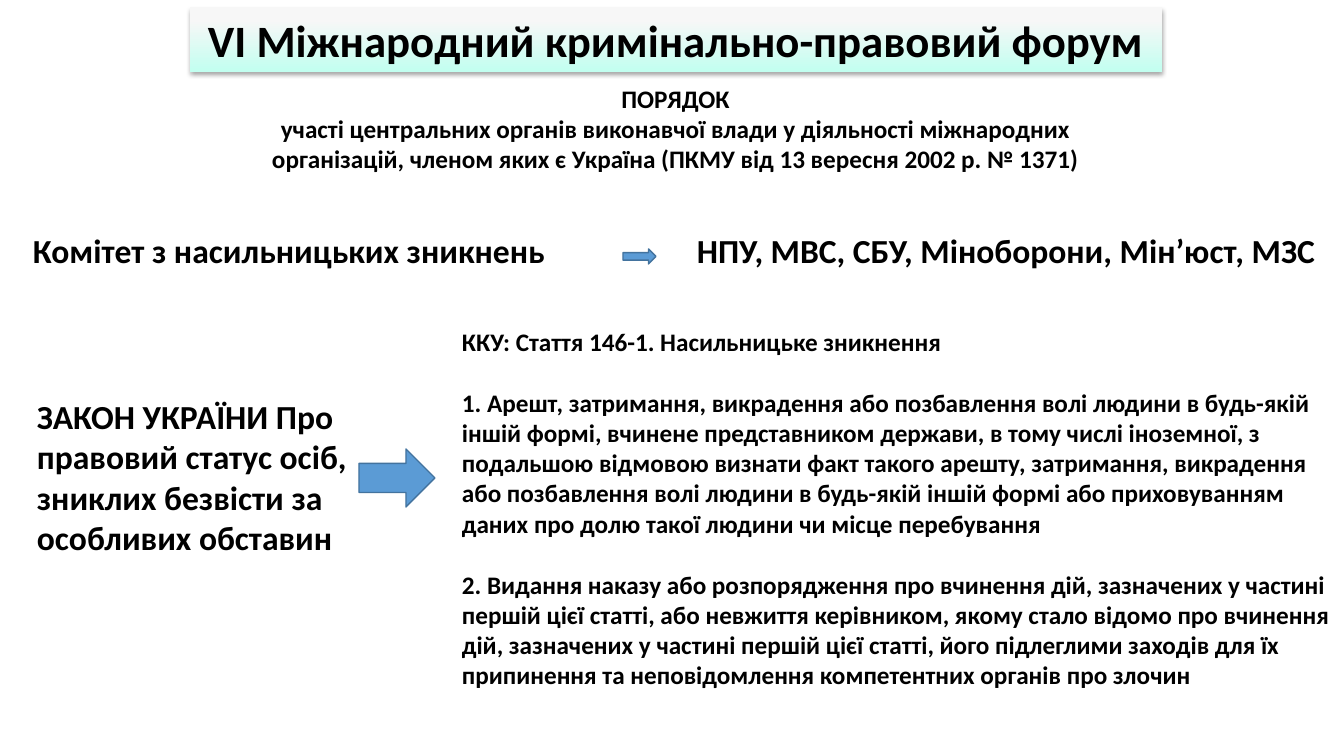
from lxml import etree
from pptx import Presentation
from pptx import util as u
from pptx.dml.color import RGBColor
from pptx.enum import shapes, text
from pptx.oxml import ns

EMU_PER_PX = 914400 / 100.8
COLORS = {
    "text": "000000",
    "title_bottom": "C2FFF0",
    "title_top": "F7F7F7",
    "arrow": "5B9BD5",
    "arrow_line": "43739E",
    "shadow": "000000",
}
FONT = "Calibri"
LEFT, CENTER = text.PP_ALIGN.LEFT, text.PP_ALIGN.CENTER

TITLE = ("VІ Міжнародний кримінально-правовий форум", (190, 7, 972, 65))

# paragraphs, box in px, size in pt, alignment, gap between paragraphs in pt
TEXTS = [
    (["ПОРЯДОК",
      "участі центральних органів виконавчої влади у діяльності міжнародних "
      "організацій, членом яких є Україна (ПКМУ від 13 вересня 2002 р. № 1371)"],
     (237, 78, 877, 102), 18, CENTER, 0),
    (["Комітет з насильницьких зникнень"], (23, 225, 590, 50), 24, LEFT, 0),
    (["НПУ, МВС, СБУ, Міноборони, Мін’юст, МЗС"], (687, 225, 650, 50), 24, LEFT, 0),
    (["ЗАКОН УКРАЇНИ Про правовий статус осіб, зниклих безвісти "
      "за особливих обставин"], (27, 391, 419, 173), 24, LEFT, 0),
    (["ККУ: Стаття 146-1. Насильницьке зникнення",
      "1. Арешт, затримання, викрадення або позбавлення волі людини в будь-якій "
      "іншій формі, вчинене представником держави, в тому числі іноземної, з "
      "подальшою відмовою визнати факт такого арешту, затримання, викрадення "
      "або позбавлення волі людини в будь-якій іншій формі або приховуванням "
      "даних про долю такої людини чи місце перебування",
      "2. Видання наказу або розпорядження про вчинення дій, зазначених у частині "
      "першій цієї статті, або невжиття керівником, якому стало відомо про вчинення "
      "дій, зазначених у частині першій цієї статті, його підлеглими заходів для їх "
      "припинення та неповідомлення компетентних органів про злочин"],
     (452, 321, 892, 377), 18, LEFT, 22),
]
ARROWS = [(623, 249, 33, 15), (359, 449, 76, 58)]


def px(length):
    return u.Emu(round(length * EMU_PER_PX))


def color(name):
    return RGBColor.from_string(COLORS[name])


def write(frame, paragraphs, size, alignment, gap=0):
    frame.word_wrap = True
    frame.auto_size = text.MSO_AUTO_SIZE.NONE
    for index, words in enumerate(paragraphs):
        paragraph = frame.add_paragraph() if index else frame.paragraphs[0]
        paragraph.text = words
        paragraph.alignment = alignment
        paragraph.space_before = u.Pt(gap if index else 0)
        font = paragraph.font
        font.name, font.size, font.bold = FONT, u.Pt(size), True
        font.color.rgb = color("text")


def add_shadow(shape):
    effects = etree.SubElement(shape.element.spPr, ns.qn("a:effectLst"))
    shadow = etree.SubElement(effects, ns.qn("a:outerShdw"), blurRad="40000",
                              dist="23000", dir="5400000", rotWithShape="0")
    tint = etree.SubElement(shadow, ns.qn("a:srgbClr"), val=COLORS["shadow"])
    etree.SubElement(tint, ns.qn("a:alpha"), val="35000")


def add_title(slide):
    words, box = TITLE
    title = slide.shapes.title
    title.left, title.top, title.width, title.height = map(px, box)
    title.fill.gradient()
    title.fill.gradient_angle = 90
    bottom, top = title.fill.gradient_stops
    bottom.color.rgb, bottom.position = color("title_bottom"), 0
    top.color.rgb, top.position = color("title_top"), 0.8
    add_shadow(title)
    write(title.text_frame, [words], 32, CENTER)


def add_arrow(slide, box):
    arrow = slide.shapes.add_shape(shapes.MSO_SHAPE.RIGHT_ARROW, *map(px, box))
    arrow.shadow.inherit = False
    arrow.fill.solid()
    arrow.fill.fore_color.rgb = color("arrow")
    arrow.line.color.rgb = color("arrow_line")
    arrow.line.width = u.Pt(1)


def main():
    presentation = Presentation()
    presentation.slide_width, presentation.slide_height = px(1344), px(756)
    slide = presentation.slides.add_slide(presentation.slide_layouts[5])
    add_title(slide)
    for paragraphs, box, size, alignment, gap in TEXTS:
        textbox = slide.shapes.add_textbox(*map(px, box))
        write(textbox.text_frame, paragraphs, size, alignment, gap)
    for box in ARROWS:
        add_arrow(slide, box)
    presentation.save("out.pptx")


if __name__ == "__main__":
    main()
